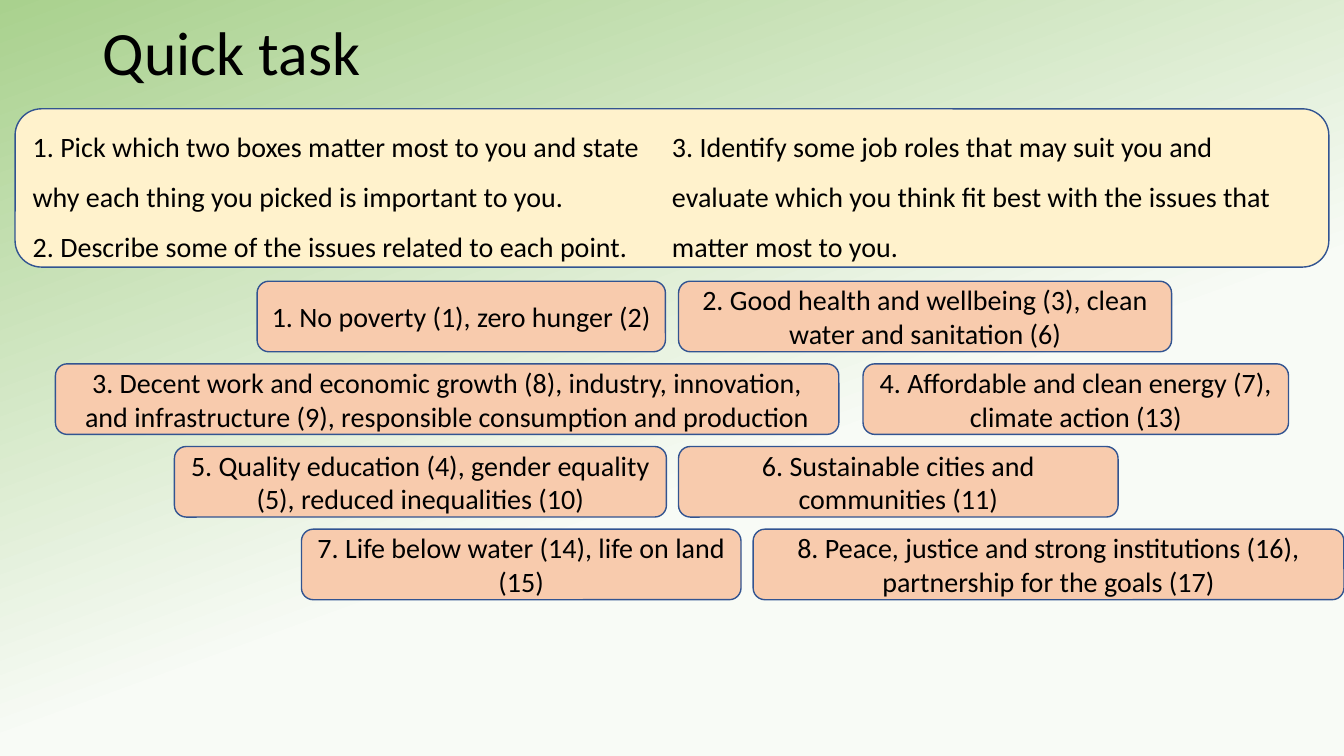
from pptx import Presentation
from pptx.dml.color import RGBColor
from pptx.enum.shapes import MSO_SHAPE
from pptx.enum.text import MSO_ANCHOR, MSO_AUTO_SIZE, PP_ALIGN
from pptx.util import Inches, Pt

COLORS = {
    "text": "000000",
    "outline": "325491",
    "goal": "F8CBAD",
    "task": "FFF2CC",
    "green": "A9D18E",
    "pale": "F8FBF6",
}


class TaskSlide:
    """Slide on a grid whose columns and rows are a tenth of an inch."""

    CELL = Inches(0.1)
    FONT = "Calibri"

    def __init__(self, deck):
        self.slide = deck.slides.add_slide(deck.slide_layouts[5])

    def color(self, name):
        return RGBColor.from_string(COLORS[name])

    def cells(self, *counts):
        return [round(count * self.CELL) for count in counts]

    def background(self, start, end, reach, angle):
        fill = self.slide.background.fill
        fill.gradient()
        fill.gradient_angle = angle
        for stop, name, position in zip(fill.gradient_stops, (start, end), (0, reach)):
            stop.color.rgb = self.color(name)
            stop.position = position

    def set_text(self, frame, paragraphs, size, align, spacing):
        frame.word_wrap = True
        frame.auto_size = MSO_AUTO_SIZE.NONE
        frame.vertical_anchor = MSO_ANCHOR.MIDDLE
        frame.text = "\n".join(paragraphs)
        for paragraph in frame.paragraphs:
            paragraph.alignment = align
            paragraph.line_spacing = spacing
            paragraph.font.name = self.FONT
            paragraph.font.size = Pt(size)
            paragraph.font.color.rgb = self.color("text")

    def title(self, text, column, row, width, height):
        title = self.slide.shapes.title
        title.left, title.top, title.width, title.height = self.cells(
            column, row, width, height)
        self.set_text(title.text_frame, [text], 44, PP_ALIGN.LEFT, 0.9)

    def box(self, paragraphs, column, row, width, height, fill,
            align=PP_ALIGN.CENTER, spacing=1.0, text_columns=1):
        box = self.slide.shapes.add_shape(
            MSO_SHAPE.ROUNDED_RECTANGLE, *self.cells(column, row, width, height))
        box.shadow.inherit = False
        box.fill.solid()
        box.fill.fore_color.rgb = self.color(fill)
        box.line.color.rgb = self.color("outline")
        box.line.width = Pt(1)
        self.set_text(box.text_frame, paragraphs, 20, align, spacing)
        if text_columns > 1:
            body = box.text_frame._txBody.bodyPr
            body.set("numCol", str(text_columns))


# Each row of goals: (text, first column, width)
GOAL_ROWS = [
    [("1. No poverty (1), zero hunger (2)", 25.5, 40.5),
     ("2. Good health and wellbeing (3), clean water and sanitation (6)", 67.3, 48.9)],
    [("3. Decent work and economic growth (8), industry, innovation, "
      "and infrastructure (9), responsible consumption and production", 5.5, 77.7),
     ("4. Affordable and clean energy (7), climate action (13)", 85.6, 42.2)],
    [("5. Quality education (4), gender equality (5), reduced inequalities (10)",
      17.3, 48.8),
     ("6. Sustainable cities and communities (11)", 67.3, 43.6)],
    [("7. Life below water (14), life on land (15)", 29.9, 43.6),
     ("8. Peace, justice and strong institutions (16), "
      "partnership for the goals (17)", 74.7, 58.6)],
]
FIRST_GOAL_ROW, GOAL_PITCH, GOAL_HEIGHT = 27.9, 8.2, 7

TASKS = [
    "1. Pick which two boxes matter most to you and state why each thing you "
    "picked is important to you.",
    "2. Describe some of the issues related to each point.",
    "3. Identify some job roles that may suit you and evaluate which you think "
    "fit best with the issues that matter most to you.",
]


def main():
    deck = Presentation()
    deck.slide_width, deck.slide_height = Inches(13.33), Inches(7.5)
    page = TaskSlide(deck)

    # Background and title
    page.background("green", "pale", reach=0.6, angle=290)
    page.title("Quick task", 9.2, -1.7, 115, 14.5)

    # Goals to choose from
    for index, goals in enumerate(GOAL_ROWS):
        row = FIRST_GOAL_ROW + index * GOAL_PITCH
        for goal, column, width in goals:
            page.box([goal], column, row, width, GOAL_HEIGHT, "goal")

    # Task instructions
    page.box(TASKS, 1.5, 10.8, 130.3, 15.7, "task",
             align=PP_ALIGN.LEFT, spacing=1.5, text_columns=2)

    deck.save("out.pptx")


if __name__ == "__main__":
    main()
